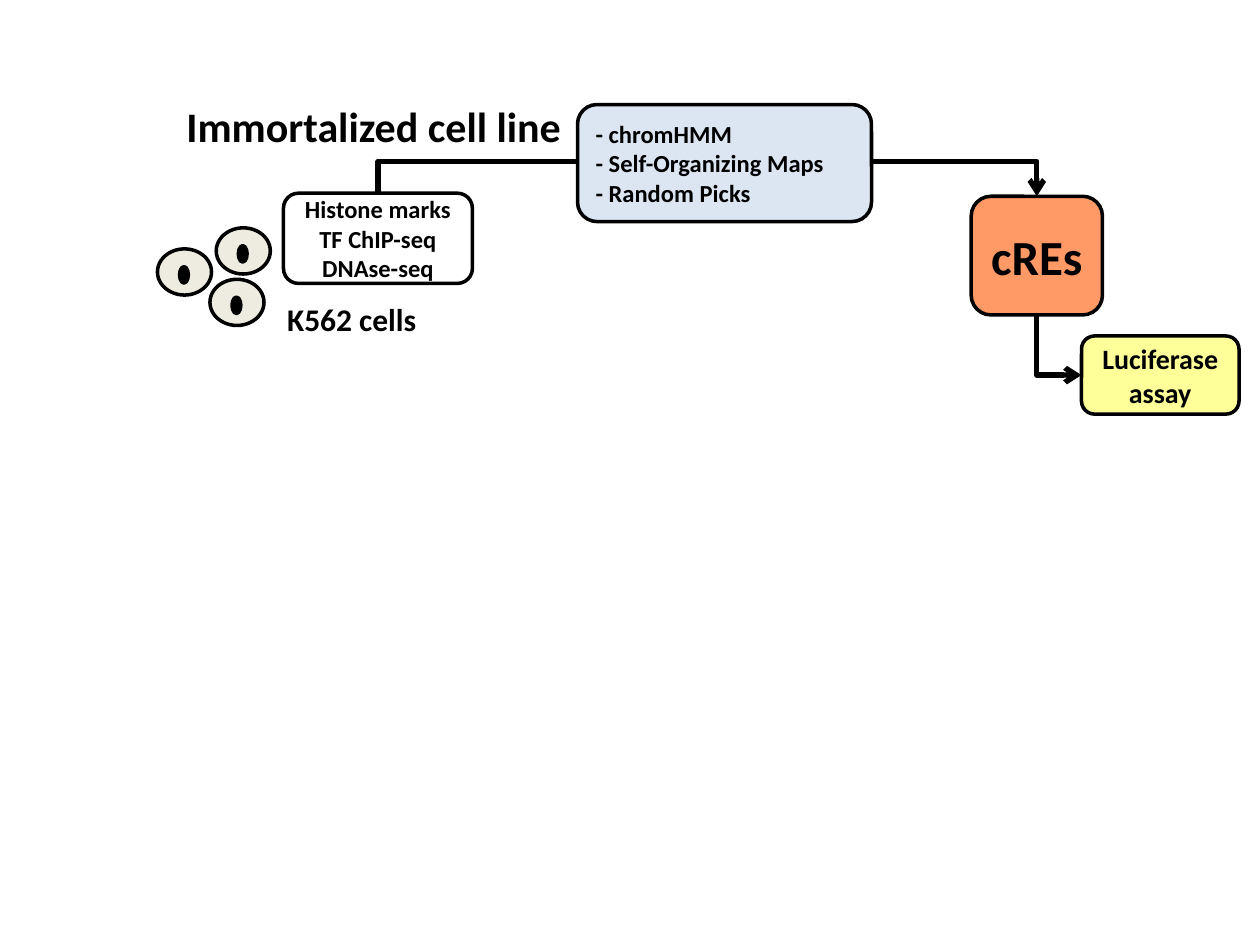
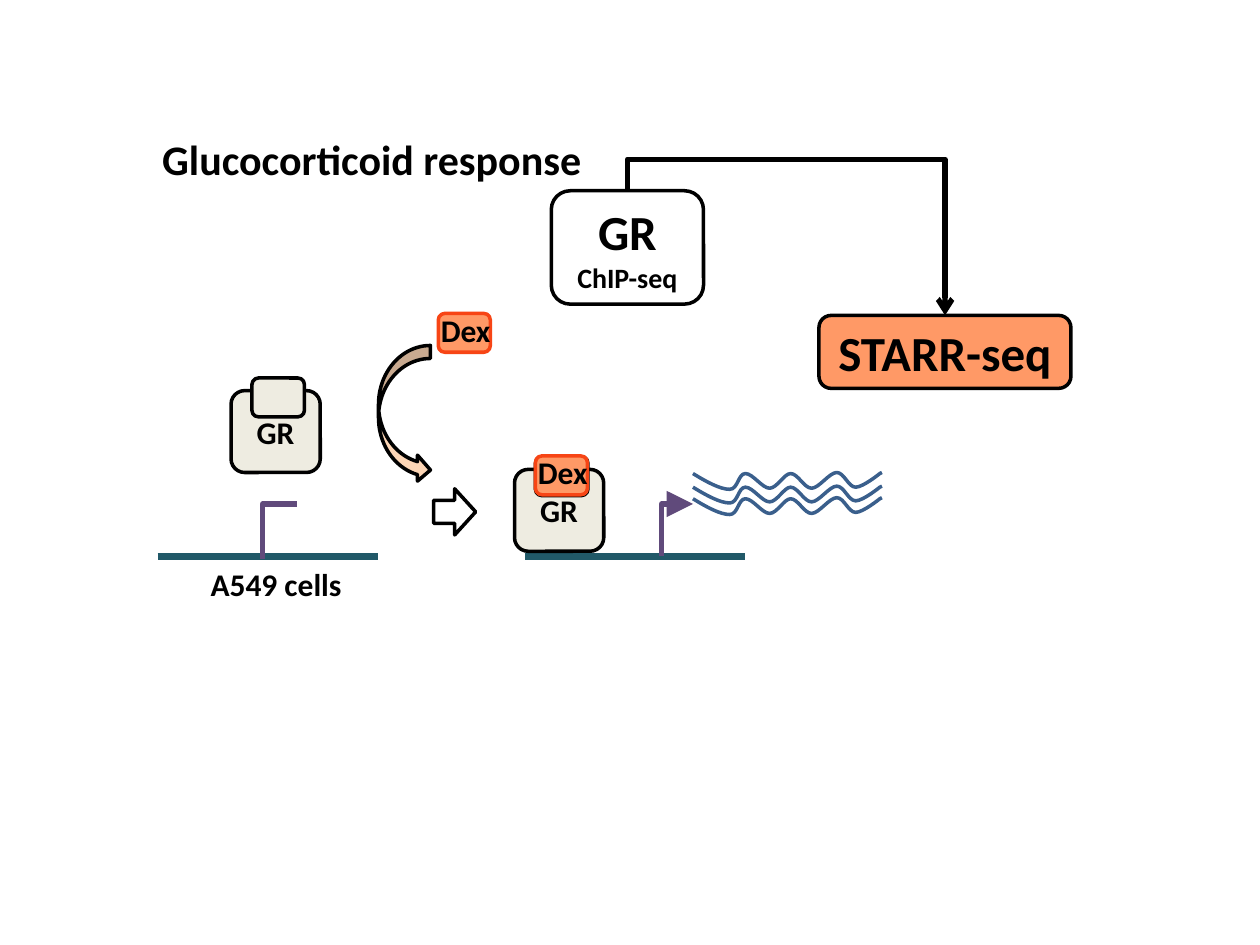
from lxml import etree
from pptx import Presentation
from pptx.dml.color import RGBColor
from pptx.enum.shapes import MSO_CONNECTOR, MSO_SHAPE
from pptx.enum.text import MSO_ANCHOR, PP_ALIGN
from pptx.oxml.ns import qn
from pptx.util import Inches, Pt

FONT = "Calibri"
COLORS = {
    "black": "000000", "white": "FFFFFF", "cell": "EEECE1",
    "orange": "FF9966", "dex_edge": "F74515", "yellow": "FFFF99",
    "blue": "DCE6F2", "peach": "FCD5B5", "dna": "215968",
    "promoter": "604A7B", "rna": "3A5F8C",
}
RGB = {name: RGBColor.from_string(value) for name, value in COLORS.items()}

prs = Presentation()
prs.slide_width, prs.slide_height = Inches(10), Inches(7.5)
U = prs.slide_width // 120  # grid of 120 columns by 90 rows
TITLE_ONLY = prs.slide_layouts[5]


def add_box(s, kind, x, y, w, h, text="", sizes=(18,), fill=None, line="black",
            align=PP_ALIGN.CENTER, wrap=True):
    """Place a preset shape, a text box (kind None) or the title (kind "title")."""
    area = [int(v * U) for v in (x, y, w, h)]
    if kind == "title":
        sp = s.shapes.title
        sp.left, sp.top, sp.width, sp.height = area
    elif kind is None:
        sp = s.shapes.add_textbox(*area)
    else:
        sp = s.shapes.add_shape(kind, *area)
        sp.shadow.inherit = False
        sp.line.color.rgb = RGB[line]
        sp.line.width = Pt(2)
        if fill:
            sp.fill.solid()
            sp.fill.fore_color.rgb = RGB[fill]
        else:
            sp.fill.background()
    if text:
        tf = sp.text_frame
        tf.word_wrap = wrap
        tf.vertical_anchor = MSO_ANCHOR.TOP if kind in (None, "title") else MSO_ANCHOR.MIDDLE
        for i, row in enumerate(text.split("\n")):
            p = tf.paragraphs[0] if i == 0 else tf.add_paragraph()
            p.alignment = align
            r = p.add_run()
            r.text = row
            r.font.name, r.font.bold = FONT, True
            r.font.size = Pt(sizes[min(i, len(sizes) - 1)])
            r.font.color.rgb = RGB["black"]
    return sp


def add_line(s, start, end, bend=None, color="black", width=3, head=None, join=None,
             cap="flat"):
    """Draw a straight line, or an elbow that leaves vertically and turns at row bend.

    join holds (begin shape, site, end shape, site).
    """
    (x1, y1), (x2, y2) = start, end
    kind = MSO_CONNECTOR.STRAIGHT if bend is None else MSO_CONNECTOR.ELBOW
    c = s.shapes.add_connector(kind, *[int(v * U) for v in (x1, y1, x2, y2)])
    if join:
        c.begin_connect(*join[:2])
        c.end_connect(*join[2:])
    spPr = c._element.spPr
    if bend is not None:
        # A quarter turn swaps the two sides of the frame around its centre
        w, h = abs(y2 - y1), abs(x2 - x1)
        c.left, c.top = int(((x1 + x2 - w) / 2) * U), int(((y1 + y2 - h) / 2) * U)
        c.width, c.height = int(w * U), int(h * U)
        xfrm = spPr.find(qn("a:xfrm"))
        xfrm.attrib.pop("flipV", None)
        xfrm.set("rot", "16200000")
        xfrm.set("flipH", "1" if y2 > y1 else "0")
        geom = spPr.find(qn("a:prstGeom"))
        if join and bend == y2:
            geom.set("prst", "bentConnector2")
        else:
            guides = geom.find(qn("a:avLst"))
            if guides is None:
                guides = etree.SubElement(geom, qn("a:avLst"))
            share = round((bend - y1) / (y2 - y1) * 100000)
            etree.SubElement(guides, qn("a:gd"), name="adj1", fmla=f"val {share}")
    c.line.color.rgb = RGB[color]
    c.line.width = Pt(width)
    ln = c.line._get_or_add_ln()
    ln.set("cap", cap)
    if head:
        size = "lg" if head == "triangle" else "med"
        etree.SubElement(ln, qn("a:tailEnd"), type=head, w=size, len=size)
    etree.SubElement(spPr, qn("a:effectLst"))


ROUND = MSO_SHAPE.ROUNDED_RECTANGLE

# Slide 1: immortalized cell line
s = prs.slides.add_slide(TITLE_ONLY)
add_box(s, "title", 16.55, 9, 38.4, 6, "Immortalized cell line", (24,),
        align=PP_ALIGN.LEFT, wrap=False)
for x, y in [(20.6, 21.7), (15, 23.7), (20, 26.6)]:
    add_box(s, MSO_SHAPE.OVAL, x, y, 5.15, 4.4, fill="cell")
    add_box(s, MSO_SHAPE.OVAL, x + 2.1, y + 1.7, 0.84, 1.56, fill="black")
add_box(s, None, 22, 28, 23, 4.8, "K562 cells")
marks = add_box(s, ROUND, 27, 18.4, 18, 8.6, "Histone marks\nTF ChIP-seq\nDNAse-seq",
                (14,), fill="white")
cres = add_box(s, ROUND, 92.5, 18.7, 12.5, 11.3, "cREs", (28,), fill="orange")
assay = add_box(s, ROUND, 103, 32, 15, 7.44, "Luciferase assay", (16,), fill="yellow")
add_line(s, (36, 18.4), (98.75, 18.7), bend=15.4, head="arrow", join=(marks, 0, cres, 0))
add_line(s, (98.75, 30), (103, 35.72), bend=35.72, head="arrow", join=(cres, 2, assay, 1))
add_box(s, ROUND, 55, 9.96, 28, 11.15, "- chromHMM\n- Self-Organizing Maps\n- Random Picks",
        (14,), fill="blue", align=PP_ALIGN.LEFT)

# Slide 2: glucocorticoid response
s = prs.slides.add_slide(TITLE_ONLY)
add_box(s, "title", 14.25, 12.1, 42.7, 6, "Glucocorticoid response", (24,),
        align=PP_ALIGN.LEFT, wrap=False)
add_box(s, MSO_SHAPE.RIGHT_ARROW, 41.3, 46.55, 4, 4.4)
add_box(s, None, 18.87, 53.2, 15, 4.8, "A549 cells", align=PP_ALIGN.LEFT, wrap=False)
chip = add_box(s, ROUND, 52.5, 18.17, 14.5, 10.8, "GR\nChIP-seq", (28, 16), fill="white")
starr = add_box(s, ROUND, 78, 30.04, 24, 6.95, "STARR-seq", (28,), fill="orange")
add_line(s, (59.75, 18.17), (90, 30.04), bend=15.17, head="arrow", join=(chip, 0, starr, 0))

# Gene before and after induction: DNA, promoter, receptor with its pocket
for dna_x, promoter_x, head, cap, gr_x, gr_y in [(15, 25, None, "sq", 22, 37.2),
                                                 (50, 63, "triangle", "flat", 49, 44.7)]:
    add_line(s, (dna_x, 53), (dna_x + 21, 53), color="dna", width=4.5)
    add_line(s, (promoter_x, 53), (promoter_x + 3, 48), bend=48, color="promoter",
             head=head, cap=cap)
    add_box(s, ROUND, gr_x, gr_y, 8.5, 7.8, "GR", fill="cell")
    add_box(s, ROUND, gr_x + 2, gr_y - 1.2, 5, 3.7, fill="cell")

for x, y in [(41.75, 29.85), (51, 43.42)]:
    add_box(s, ROUND, x, y, 4.95, 3.7, fill="orange", line="dex_edge")
    add_box(s, None, x - 1, y - 0.84, 7.2, 4.8, "Dex", wrap=False)
add_box(s, MSO_SHAPE.CURVED_RIGHT_ARROW, 36.05, 32.9, 4.95, 13.1, fill="peach")

# RNA strands: Bezier pieces, each with two controls and an end
WAVE = [
    [(1.3, 0.9), (2.6, 1.6), (3.5, 1.6)], [(4.3, 1.6), (4.3, 0.1), (5, 0.1)],
    [(5.7, 0.1), (6.6, 1.5), (7.3, 1.5)], [(8, 1.5), (8.7, 0.1), (9.3, 0.1)],
    [(10, 0.1), (10.6, 1.5), (11.3, 1.5)], [(12, 1.5), (13, 0), (13.7, 0)],
    [(14.4, 0), (14.8, 1.4), (15.5, 1.4)], [(16.2, 1.4), (17.8, 0.1), (17.8, 0.1)],
]
ends = [(0, 0.1)] + [piece[-1] for piece in WAVE] + [(18, 0)]
for top in (45, 46.3, 47.4):
    strand = [(int((66 + x) * U), int((top + y) * U)) for x, y in ends]
    builder = s.shapes.build_freeform(*strand[0])
    builder.add_line_segments(strand[1:], close=False)
    sp = builder.convert_to_shape()
    for piece, straight in zip(WAVE, list(sp._element.iter(qn("a:lnTo")))):
        curve = etree.Element(qn("a:cubicBezTo"))
        for x, y in piece:
            etree.SubElement(curve, qn("a:pt"), x=str(int(x * U)), y=str(int(y * U)))
        straight.getparent().replace(straight, curve)
    sp.shadow.inherit = False
    sp.fill.background()
    sp.line.color.rgb = RGB["rna"]
    sp.line.width = Pt(2)

prs.save("out.pptx")
